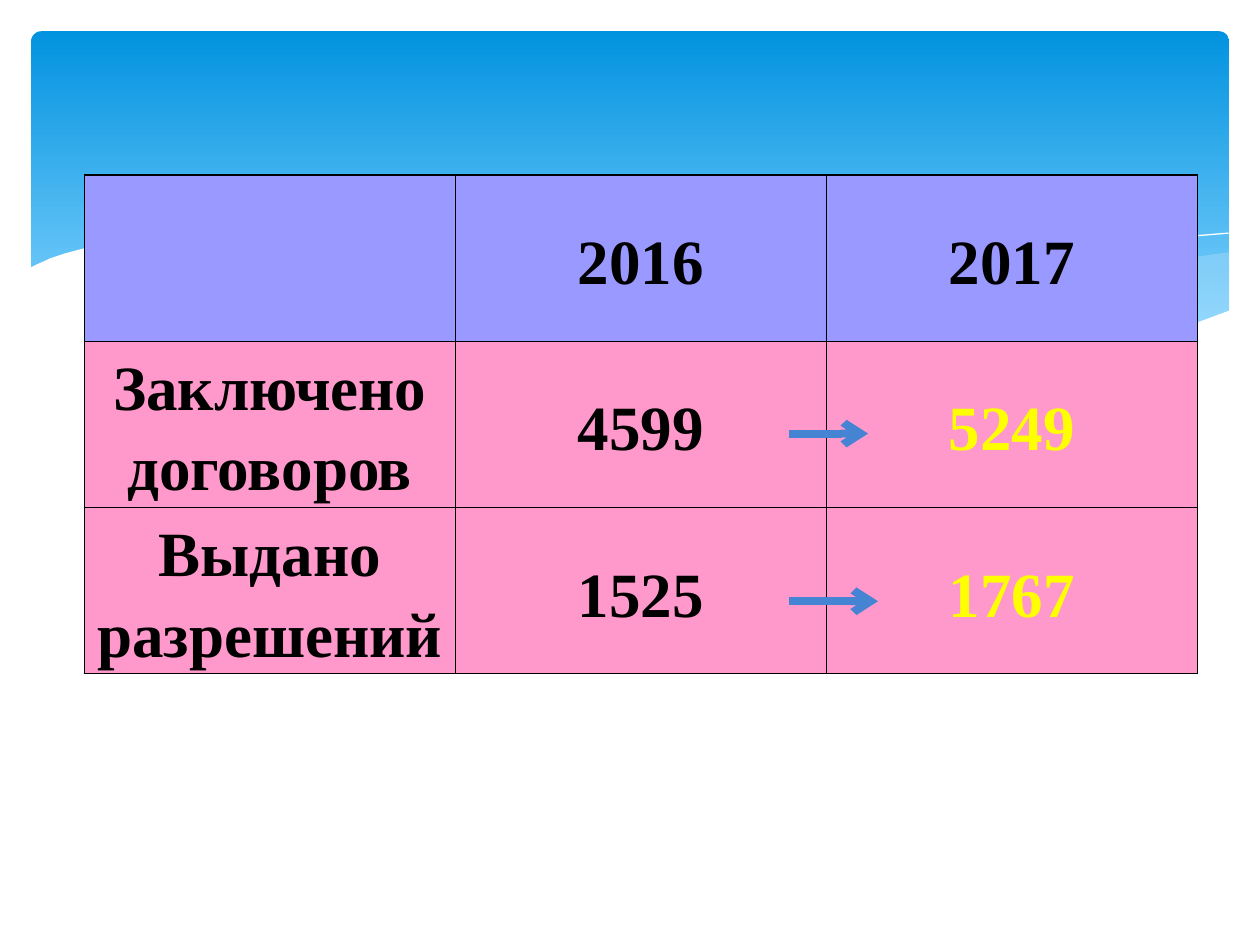
from lxml import etree
from pptx import Presentation
from pptx.dml.color import RGBColor
from pptx.enum.shapes import MSO_CONNECTOR, MSO_SHAPE
from pptx.enum.text import MSO_ANCHOR, PP_ALIGN
from pptx.oxml import parse_xml
from pptx.oxml.ns import nsdecls, qn
from pptx.util import Cm, Pt

STRAIGHT = MSO_CONNECTOR.STRAIGHT
ROUND = MSO_SHAPE.ROUNDED_RECTANGLE
MIDDLE = MSO_ANCHOR.MIDDLE
CENTER = PP_ALIGN.CENTER

SKY = RGBColor(0x02, 0x93, 0xE0)
PALE = RGBColor(0x83, 0xD3, 0xFE)
MIST = RGBColor(0xC6, 0xE7, 0xFC)
WHITE = RGBColor(0xFF, 0xFF, 0xFF)
BLACK = RGBColor(0, 0, 0)
LILAC = RGBColor(0x99, 0x99, 0xFF)
PINK = RGBColor(0xFF, 0x99, 0xCC)
YELLOW = RGBColor(0xFF, 0xFF, 0)
BLUE = RGBColor(0x45, 0x84, 0xD3)

FONT = "Times New Roman"
UNIT = Cm(2.54) / 100  # wave points are in hundredths of an inch

ROWS = [
    ["", "2016", "2017"],
    ["Заключено договоров", "4599", "5249"],
    ["Выдано разрешений", "1525", "1767"],
]

# Wave outlines
RIGHT_BAND = [
    (976, 200), (948, 204), (921, 210), (891, 216), (861, 223), (805, 237),
    (753, 248), (706, 257), (661, 265), (691, 269), (719, 272), (745, 275),
    (781, 277), (814, 278), (844, 277), (872, 274), (897, 270), (921, 265),
    (942, 259), (963, 252), (976, 247)]
LONG_BAND = [
    (893, 273), (866, 269), (807, 260), (741, 247), (668, 231), (613, 218),
    (569, 208), (528, 200), (489, 194), (442, 189), (399, 186), (361, 185),
    (328, 187), (286, 191), (342, 199), (383, 207), (449, 222), (530, 240),
    (601, 255), (665, 266), (722, 274), (773, 277), (818, 278), (857, 277),
    (893, 273)]
LONG_LINE = [
    (309, 195), (335, 191), (363, 189), (401, 187), (450, 188), (489, 190),
    (533, 194), (582, 200), (636, 208), (695, 219), (760, 233), (831, 251),
    (869, 261), (907, 272)]
RIGHT_LINE = [
    (613, 257), (653, 246), (695, 235), (748, 223), (806, 210), (866, 199),
    (895, 194), (924, 190), (951, 187), (975, 185)]
FRONT = [
    (977, 246), (950, 256), (920, 265), (887, 271), (850, 275), (809, 277),
    (761, 275), (708, 270), (648, 262), (579, 250), (529, 239), (475, 227),
    (418, 213), (365, 202), (316, 194), (271, 188), (230, 185), (193, 184),
    (161, 184), (132, 186), (106, 189), (85, 193), (67, 197), (52, 201),
    (40, 205), (29, 210), (23, 213), (23, 329), (977, 329)]


def banner(slide):
    box = slide.shapes.add_shape(ROUND, Cm(0.63), Cm(0.63), Cm(24.15), Cm(6.86))
    box.adjustments[0] = 0.03
    box.shadow.inherit = False
    box.line.fill.background()
    box.fill.gradient()
    box.fill.gradient_angle = 270
    for stop, color, place in zip(box.fill.gradient_stops, (SKY, PALE), (0, 0.9)):
        stop.color.rgb = color
        stop.position = place


def trace(slide, points, closed):
    pen = slide.shapes.build_freeform(*points[0], scale=UNIT)
    pen.add_line_segments(points[1:], close=closed)
    shape = pen.convert_to_shape()
    shape.shadow.inherit = False
    return shape


def band(slide, points, color, alpha=100):
    shape = trace(slide, points, True)
    shape.line.fill.background()
    shape.fill.solid()
    shape.fill.fore_color.rgb = color
    if alpha < 100:
        tint = shape.fill._xPr.find(".//" + qn("a:srgbClr"))
        etree.SubElement(tint, qn("a:alpha")).set("val", str(alpha * 1000))


def curve(slide, points):
    shape = trace(slide, points, False)
    shape.fill.background()
    shape.line.color.rgb = WHITE
    shape.line.width = Pt(0)


def border(cell):
    props = cell._tc.get_or_add_tcPr()
    for side in ("lnL", "lnR", "lnT", "lnB"):
        props.append(parse_xml(
            f'<a:{side} {nsdecls("a")} w="{Pt(1)}"><a:solidFill>'
            f'<a:srgbClr val="{BLACK}"/></a:solidFill></a:{side}>'))


def write(cell, text, color):
    cell.vertical_anchor = MIDDLE
    cell.margin_left = cell.margin_right = Cm(0.18)
    cell.margin_top = cell.margin_bottom = 0
    cell.text = text
    para = cell.text_frame.paragraphs[0]
    para.alignment = CENTER
    para.line_spacing = 1.15
    font = para.font
    font.name, font.size, font.bold = FONT, Pt(36), True
    font.color.rgb = color


def grid(slide):
    count = len(ROWS)
    table = slide.shapes.add_table(count, len(ROWS[0]), Cm(1.7), Cm(3.53),
                                   Cm(22.44), Cm(3.35) * count).table
    table.first_row = table.horz_banding = False
    for r, row in enumerate(ROWS):
        for c, text in enumerate(row):
            cell = table.cell(r, c)
            border(cell)
            cell.fill.solid()
            cell.fill.fore_color.rgb = PINK if r else LILAC
            write(cell, text, YELLOW if r and c == 2 else BLACK)


def arrow(slide, top, end):
    line = slide.shapes.add_connector(STRAIGHT, Cm(15.9), top, end, top)
    line.line.color.rgb = BLUE
    line.line.width = Pt(4.5)
    stroke = line.line._get_or_add_ln()
    etree.SubElement(stroke, qn("a:tailEnd")).set("type", "arrow")
    etree.SubElement(line._element.spPr, qn("a:effectLst"))


def main():
    deck = Presentation()
    deck.slide_width, deck.slide_height = Cm(25.4), Cm(19.05)
    slide = deck.slides.add_slide(deck.slide_layouts[6])

    # Banner with waves
    banner(slide)
    band(slide, RIGHT_BAND, MIST, 29)
    band(slide, LONG_BAND, MIST, 40)
    curve(slide, LONG_LINE)
    curve(slide, RIGHT_LINE)
    band(slide, FRONT, WHITE)

    # Table and growth arrows
    grid(slide)
    arrow(slide, Cm(8.74), Cm(17.5))
    arrow(slide, Cm(12.12), Cm(17.7))

    deck.save("out.pptx")


if __name__ == "__main__":
    main()
